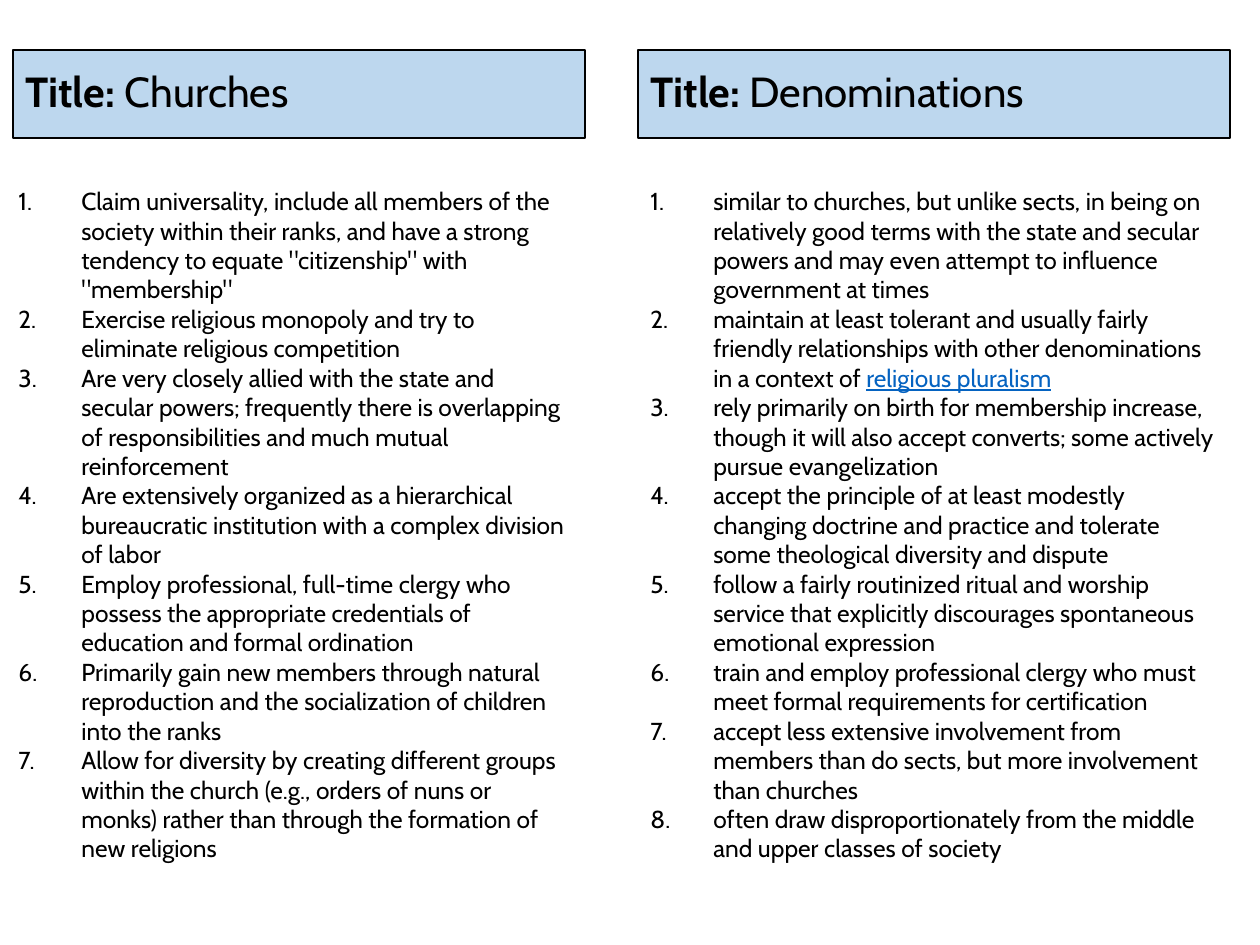
from dataclasses import dataclass

from lxml import etree
from pptx import Presentation
from pptx.dml.color import RGBColor
from pptx.enum import shapes, text
from pptx.oxml import ns
from pptx.util import Emu, Pt

EMU_PER_PX = 914400 / 126
INDENT = 63
BLACK = "000000"
LINK = "0563C1"
BANNER = "BDD7EE"


@dataclass(frozen=True)
class Box:
    left: int
    top: int
    width: int
    height: int


@dataclass(frozen=True)
class Column:
    topic: str
    heading_box: Box
    list_box: Box
    traits: list[str]
    linked: str = ""


def px(length: int) -> Emu:
    return Emu(round(length * EMU_PER_PX))


def colour(value: str) -> RGBColor:
    return RGBColor.from_string(value)


def place(box: Box) -> tuple[Emu, Emu, Emu, Emu]:
    return px(box.left), px(box.top), px(box.width), px(box.height)


def add_run(paragraph, words: str, size: int, bold: bool = False, ink: str = BLACK):
    run = paragraph.add_run()
    run.text = words
    run.font.name = "Cabin"
    run.font.size = Pt(size)
    run.font.bold = bold
    run.font.color.rgb = colour(ink)
    return run


def format_heading(heading, column: Column) -> None:
    heading.left, heading.top, heading.width, heading.height = place(column.heading_box)
    heading.fill.solid()
    heading.fill.fore_color.rgb = colour(BANNER)
    heading.line.color.rgb = colour(BLACK)
    heading.line.width = Pt(0.75)
    heading.shadow.inherit = False
    frame = heading.text_frame
    frame.word_wrap = True
    frame.auto_size = text.MSO_AUTO_SIZE.NONE
    frame.vertical_anchor = text.MSO_ANCHOR.MIDDLE
    line = frame.paragraphs[0]
    line.alignment = text.PP_ALIGN.LEFT
    line.line_spacing = 0.9
    add_run(line, "Title: ", 24, bold=True)
    add_run(line, column.topic, 24)


def number(paragraph) -> None:
    properties = paragraph._p.get_or_add_pPr()
    properties.set("marL", str(px(INDENT)))
    properties.set("indent", str(-px(INDENT)))
    etree.SubElement(properties, ns.qn("a:buAutoNum"), type="arabicPeriod")


def add_traits(slide, column: Column) -> None:
    frame = slide.shapes.add_textbox(*place(column.list_box)).text_frame
    frame.word_wrap = True
    frame.auto_size = text.MSO_AUTO_SIZE.SHAPE_TO_FIT_TEXT
    for index, trait in enumerate(column.traits):
        item = frame.add_paragraph() if index else frame.paragraphs[0]
        number(item)
        if column.linked and trait.endswith(column.linked):
            add_run(item, trait.removesuffix(column.linked), 14)
            add_run(item, column.linked, 14, ink=LINK).font.underline = True
        else:
            add_run(item, trait, 14)


CHURCHES = Column(
    "Churches",
    Box(13, 50, 572, 88),
    Box(6, 180, 578, 696),
    [
        'Claim universality, include all members of the society within their ranks, and have a strong tendency to equate "citizenship" with "membership"',
        "Exercise religious monopoly and try to eliminate religious competition",
        "Are very closely allied with the state and secular powers; frequently there is overlapping of responsibilities and much mutual reinforcement",
        "Are extensively organized as a hierarchical bureaucratic institution with a complex division of labor",
        "Employ professional, full-time clergy who possess the appropriate credentials of education and formal ordination",
        "Primarily gain new members through natural reproduction and the socialization of children into the ranks",
        "Allow for diversity by creating different groups within the church (e.g., orders of nuns or monks) rather than through the formation of new religions",
    ],
)
DENOMINATIONS = Column(
    "Denominations",
    Box(638, 50, 592, 88),
    Box(638, 180, 592, 696),
    [
        "similar to churches, but unlike sects, in being on relatively good terms with the state and secular powers and may even attempt to influence government at times",
        "maintain at least tolerant and usually fairly friendly relationships with other denominations in a context of religious pluralism",
        "rely primarily on birth for membership increase, though it will also accept converts; some actively pursue evangelization",
        "accept the principle of at least modestly changing doctrine and practice and tolerate some theological diversity and dispute",
        "follow a fairly routinized ritual and worship service that explicitly discourages spontaneous emotional expression",
        "train and employ professional clergy who must meet formal requirements for certification",
        "accept less extensive involvement from members than do sects, but more involvement than churches",
        "often draw disproportionately from the middle and upper classes of society",
    ],
    linked="religious pluralism",
)


def main() -> None:
    deck = Presentation()
    deck.slide_width, deck.slide_height = px(1260), px(945)
    slide = deck.slides.add_slide(deck.slide_layouts[5])
    format_heading(slide.shapes.title, DENOMINATIONS)
    add_traits(slide, DENOMINATIONS)
    add_traits(slide, CHURCHES)
    churches_heading = slide.shapes.add_shape(
        shapes.MSO_SHAPE.RECTANGLE, *place(CHURCHES.heading_box)
    )
    format_heading(churches_heading, CHURCHES)
    deck.save("out.pptx")


if __name__ == "__main__":
    main()
